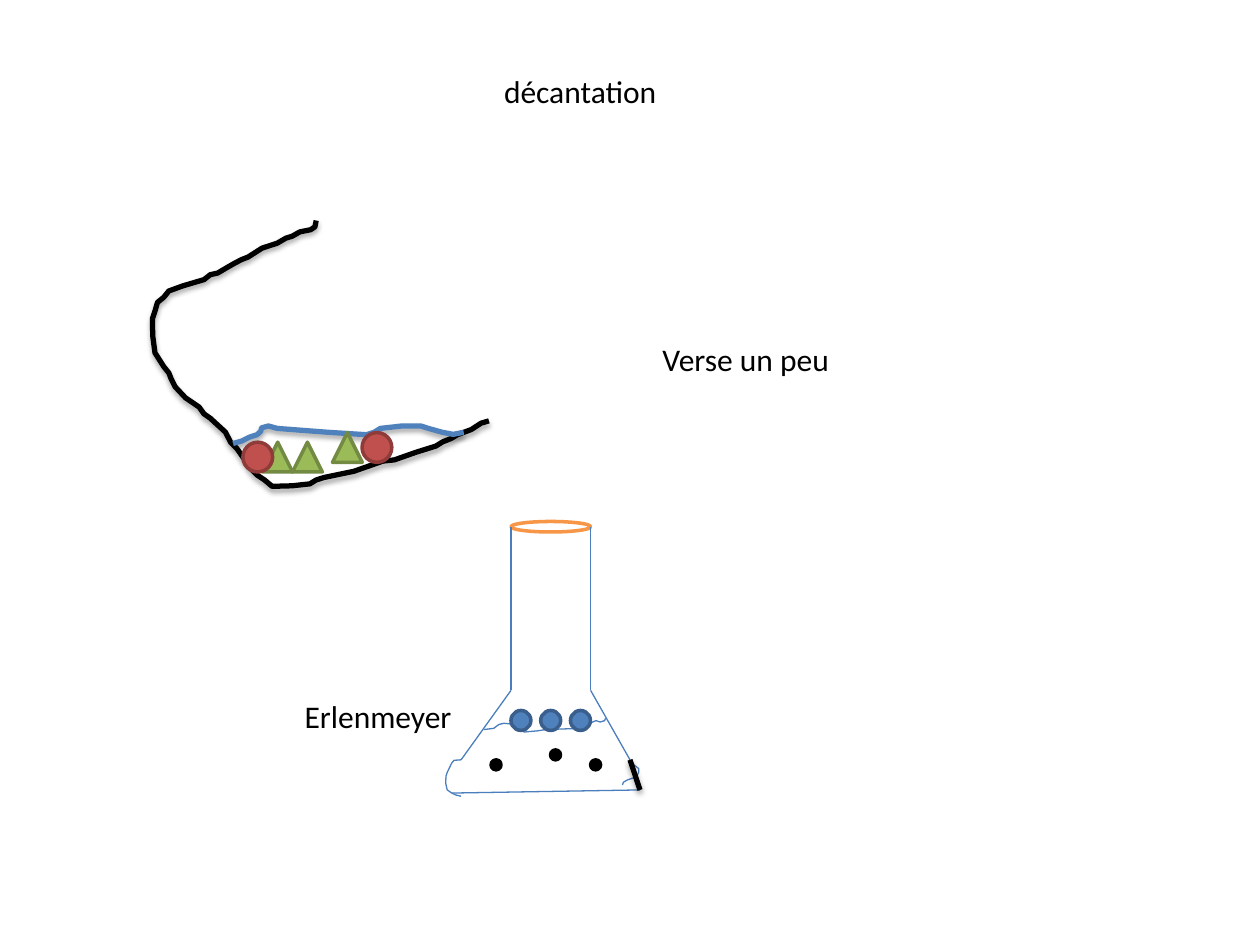
from lxml.etree import SubElement
from pptx import Presentation
from pptx.dml.color import RGBColor
from pptx.enum.shapes import MSO_CONNECTOR as Link, MSO_SHAPE as Shape
from pptx.enum.text import MSO_ANCHOR as Anchor, MSO_AUTO_SIZE as AutoSize, PP_ALIGN as Align
from pptx.oxml.ns import qn
from pptx.util import Pt

BLACK, WHITE = "000000", "FFFFFF"
WATER, GLASS = "4F81BD", "4B7EBC"
THIN, EDGE, THICK = 0.75, 2, 3

# Hand-drawn outlines, as x, y in points
BOWL = [
    (180.7, 126), (180, 129.6), (177.5, 131.3), (171.4, 132.5), (167, 135), (163.4, 136.1),
    (158.4, 139), (149.8, 141.8), (141.8, 146.9), (138.2, 148.3), (133.9, 150.5),
    (128.9, 153.4), (124.5, 156), (120.2, 157), (116.6, 159.8), (104.4, 163.4),
    (96.5, 166.3), (93.6, 169.9), (90, 172.8), (88.6, 177.8), (87.1, 182.2),
    (87.3, 192), (88.6, 201.6), (93.6, 209.5), (96.5, 213.1), (97.9, 216.7),
    (100.1, 221), (106, 227.3), (113.8, 232.6), (116.6, 236.5), (120.2, 239),
    (128.9, 247), (131.8, 252.7), (135.4, 256.3), (140.4, 263.5), (143.3, 267.8),
    (147, 271.5), (151.2, 274.3), (155.5, 277.9), (167, 277.6), (177.1, 276.5),
    (180.7, 274.3), (185, 272.9), (202.3, 269.3), (214.6, 265), (218.9, 263.5),
    (225.4, 262.8), (237.6, 258.5), (249.1, 254.9), (253, 252.5), (257.8, 250.6),
    (261.4, 248.4), (269.3, 245.5), (275, 241.8), (279.4, 240.5),
]
BOWL_WATER = [
    (265, 247), (259, 248.2), (252.7, 247), (244.8, 244.8), (240.5, 243.4), (229, 243.5),
    (217.4, 244.8), (213.8, 247), (209.5, 248.4), (187.2, 247), (158.4, 244.8),
    (153.4, 243.4), (149.5, 244.5), (149, 246.5), (146.9, 248.4), (142.6, 249.8),
    (138.2, 252), (133.2, 253.4),
]
LEFT_FOOT = [
    (263.5, 434.2), (259.5, 434.5), (258.2, 436), (255.6, 441.4), (254.9, 443.5),
    (254.7, 447.5), (255.6, 451.4), (258.2, 453.2), (260.5, 454.3), (263.5, 455),
]
RIGHT_FOOT = [
    (362.2, 437), (365, 439.2), (365, 441.4), (364.3, 442.8), (362, 444.5),
    (358.6, 445.7), (356.3, 447), (355.7, 448.6),
]
FLASK_WATER = [
    (276.5, 416.9), (282.2, 416.2), (285.1, 414), (288, 413.3), (294.5, 414),
    (297.5, 416.3), (299.5, 418.3), (307.4, 417.6), (311.8, 416.9), (332.6, 416.2),
    (337, 413.3), (340.6, 411.8), (343, 412.6), (345.6, 411.8), (346, 410.4),
]


def color(code):
    return RGBColor.from_string(code)


def add_shadow(item):
    effects = item._element.spPr.find(qn("a:effectLst"))
    shadow = SubElement(effects, qn("a:outerShdw"), blurRad=str(Pt(3.1)),
                        dist=str(Pt(1.8)), dir="5400000", rotWithShape="0")
    tint = SubElement(shadow, qn("a:srgbClr"), val=BLACK)
    SubElement(tint, qn("a:alpha"), val="35000")


def style_line(item, line, width):
    item.line.color.rgb = color(line)
    item.line.width = Pt(width)


def add_stroke(slide, points, line=GLASS, width=THIN, shadow=False):
    start, *rest = [(Pt(x), Pt(y)) for x, y in points]
    builder = slide.shapes.build_freeform(*start)
    builder.add_line_segments(rest, close=False)
    stroke = builder.convert_to_shape()
    stroke.fill.background()
    stroke.shadow.inherit = False
    style_line(stroke, line, width)
    if shadow:
        add_shadow(stroke)


def add_line(slide, start, end, line=GLASS, width=THIN, shadow=False):
    link = slide.shapes.add_connector(Link.STRAIGHT, *map(Pt, (*start, *end)))
    style_line(link, line, width)
    SubElement(link._element.spPr, qn("a:effectLst"))
    if shadow:
        add_shadow(link)


def add_solid(slide, kind, left, top, width, height, fill, line):
    solid = slide.shapes.add_shape(kind, *map(Pt, (left, top, width, height)))
    solid.shadow.inherit = False
    solid.fill.solid()
    solid.fill.fore_color.rgb = color(fill)
    style_line(solid, line, EDGE)


def write(box, text, size=18, font="Calibri", ink=BLACK):
    frame = box.text_frame
    frame.word_wrap = False
    frame.auto_size = AutoSize.SHAPE_TO_FIT_TEXT
    frame.vertical_anchor = Anchor.TOP
    paragraph = frame.paragraphs[0]
    paragraph.alignment = Align.LEFT
    run = paragraph.add_run()
    run.text = text
    run.font.size = Pt(size)
    run.font.name = font
    run.font.color.rgb = color(ink)


def add_label(slide, text, left, top, width, height=29):
    write(slide.shapes.add_textbox(*map(Pt, (left, top, width, height))), text)


def draw_bowl(slide):
    add_stroke(slide, BOWL, BLACK, THICK, shadow=True)
    add_stroke(slide, BOWL_WATER, WATER, THICK, shadow=True)
    # Solid grains left in the bowl
    grain = 17
    for left, top in [(150.2, 252.7), (167.2, 252.7), (190, 247.2)]:
        add_solid(slide, Shape.ISOSCELES_TRIANGLE, left, top, grain, grain, "9BBB59", "738A42")
    for left, top in [(206.9, 247.2), (138.8, 252.7)]:
        add_solid(slide, Shape.OVAL, left, top, grain, grain, "C0504D", "8E3B39")


def draw_flask(slide):
    neck_left, neck_right, rim, shoulder = 292, 337.5, 301, 394.5
    add_solid(slide, Shape.OVAL, neck_left, rim - 3, neck_right - neck_left, 6, WHITE, "F79646")
    for neck, foot in [(neck_left, 263.5), (neck_right, 360)]:
        add_line(slide, (neck, rim), (neck, shoulder))
        add_line(slide, (neck, shoulder), (foot, 434.2))
    add_stroke(slide, LEFT_FOOT)
    add_stroke(slide, RIGHT_FOOT)
    add_line(slide, (258.2, 453.2), (365.7, 451.4))
    add_line(slide, (360, 434.2), (365.7, 451.4), BLACK, THICK, shadow=True)
    # Particles below and at the surface
    for left, top in [(280.6, 434.2), (314.6, 428.5), (337.5, 434.2)]:
        add_solid(slide, Shape.OVAL, left, top, 5.7, 5.7, BLACK, BLACK)
    add_stroke(slide, FLASK_WATER)
    for step in range(3):
        add_solid(slide, Shape.OVAL, neck_left + 17 * step, 406, 11.4, 11.4, WATER, "3A5F8C")


def main():
    deck = Presentation()
    deck.slide_width, deck.slide_height = Pt(720), Pt(540)
    slide = deck.slides.add_slide(deck.slide_layouts[5])

    heading = slide.shapes.title
    heading.left, heading.top, heading.width, heading.height = map(Pt, (280.8, 37.5, 103, 29))
    write(heading, "décantation")

    draw_bowl(slide)
    draw_flask(slide)
    add_label(slide, "Verse un peu", 371.5, 191, 111)
    add_label(slide, "Erlenmeyer", 167, 394.5, 103.7)
    deck.save("out.pptx")


if __name__ == "__main__":
    main()
